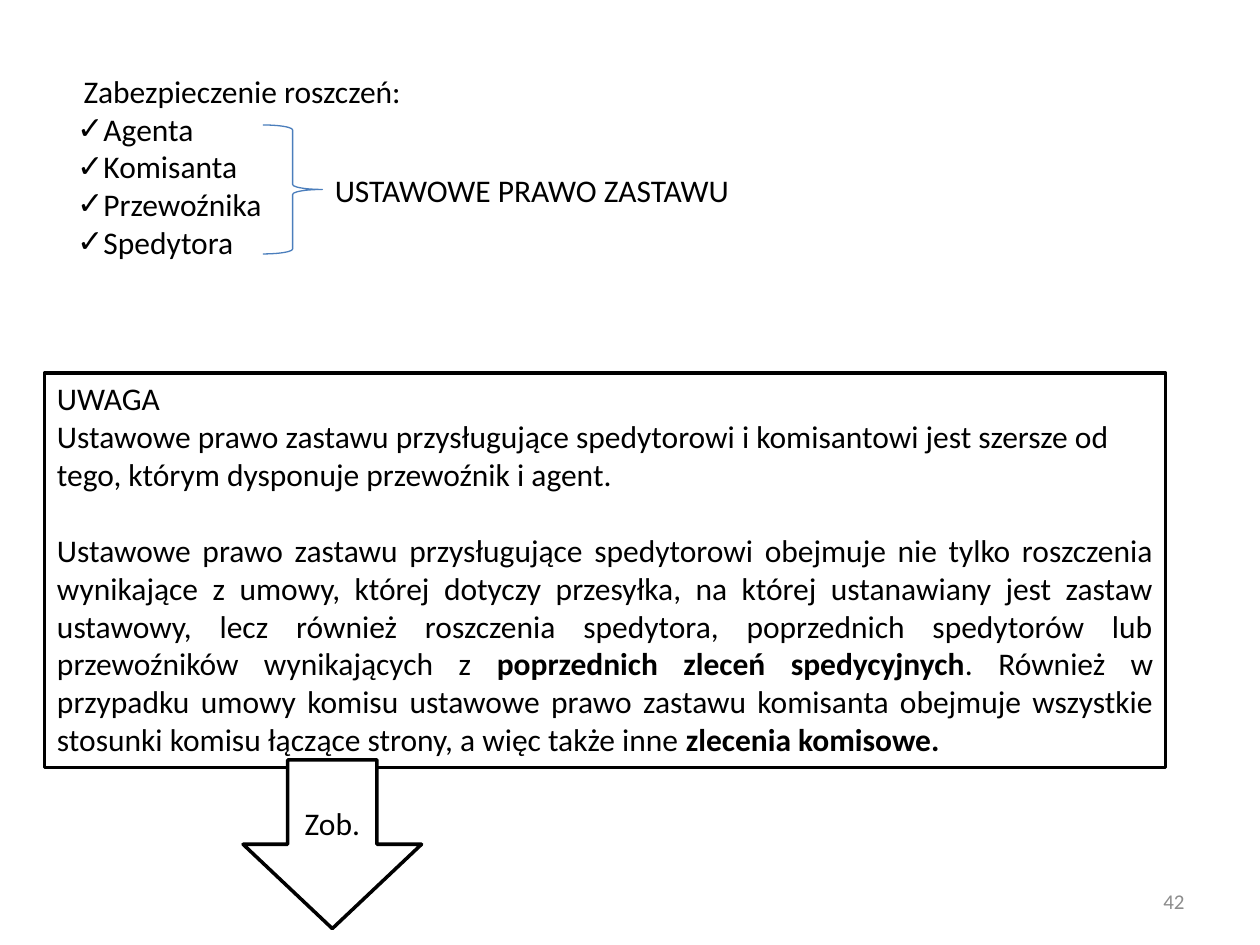
from dataclasses import dataclass

import pptx
import pptx.dml.color
import pptx.enum.shapes
import pptx.enum.text
import pptx.oxml.ns
import pptx.util
from lxml import etree
from pptx.util import Cm, Pt

RGBColor = pptx.dml.color.RGBColor
Shapes = pptx.enum.shapes.MSO_SHAPE
Align = pptx.enum.text.PP_ALIGN
Anchor = pptx.enum.text.MSO_ANCHOR

BLACK = RGBColor(0x00, 0x00, 0x00)
WHITE = RGBColor(0xFF, 0xFF, 0xFF)
GREY = RGBColor(0x8C, 0x8C, 0x8C)
BLUE = RGBColor(0x4B, 0x7E, 0xBC)

FONT = "Calibri"
TEXT_SIZE = 18
LINE_HEIGHT = Pt(22)
BULLET_INDENT = Cm(0.53)


@dataclass(frozen=True)
class Area:
    """Left, top, width and height in centimetres."""
    left: float
    top: float
    width: float
    height: float

    def lengths(self) -> tuple:
        return Cm(self.left), Cm(self.top), Cm(self.width), Cm(self.height)


@dataclass(frozen=True)
class Span:
    text: str
    bold: bool = False


@dataclass(frozen=True)
class Para:
    spans: tuple[Span, ...]
    align: Align = Align.LEFT
    bullet: bool = False
    indent: float = 0
    space_before: int = 0
    size: int = TEXT_SIZE
    color: RGBColor = BLACK


SECURED_PARTIES = ("Agenta", "Komisanta", "Przewoźnika", "Spedytora")
CLAIMS = [Para((Span("Zabezpieczenie roszczeń:"),), indent=0.13)] + [
    Para((Span(party),), bullet=True) for party in SECURED_PARTIES
]
NOTE = [
    Para((Span("UWAGA"),)),
    Para((Span("Ustawowe prawo zastawu przysługujące spedytorowi i komisantowi jest "
               "szersze od tego, którym dysponuje przewoźnik i agent."),)),
    Para((
        Span("Ustawowe prawo zastawu przysługujące spedytorowi obejmuje nie tylko "
             "roszczenia wynikające z umowy, której dotyczy przesyłka, na której "
             "ustanawiany jest zastaw ustawowy, lecz również roszczenia spedytora, "
             "poprzednich spedytorów lub przewoźników wynikających z "),
        Span("poprzednich zleceń spedycyjnych", bold=True),
        Span(". Również w przypadku umowy komisu ustawowe prawo zastawu komisanta "
             "obejmuje wszystkie stosunki komisu łączące strony, a więc także inne "),
        Span("zlecenia komisowe.", bold=True),
    ), align=Align.JUSTIFY, space_before=LINE_HEIGHT),
]


def set_marker(paragraph, para: Para) -> None:
    """Give the paragraph its indent and a check mark, or no bullet."""
    properties = paragraph._p.get_or_add_pPr()
    left = BULLET_INDENT if para.bullet else Cm(para.indent)
    properties.set("marL", str(left))
    properties.set("indent", str(-left if para.bullet else 0))
    tag = "a:buChar" if para.bullet else "a:buNone"
    marker = etree.SubElement(properties, pptx.oxml.ns.qn(tag))
    if para.bullet:
        marker.set("char", "✓")


def write(shape, paras: list[Para], anchor: Anchor = Anchor.TOP, wrap: bool = True) -> None:
    frame = shape.text_frame
    frame.word_wrap = wrap
    frame.auto_size = pptx.enum.text.MSO_AUTO_SIZE.NONE
    frame.vertical_anchor = anchor
    for index, para in enumerate(paras):
        paragraph = frame.add_paragraph() if index else frame.paragraphs[0]
        paragraph.alignment = para.align
        paragraph.space_before = para.space_before or Pt(0)
        set_marker(paragraph, para)
        paragraph.font.name = FONT
        paragraph.font.size = Pt(para.size)
        paragraph.font.color.rgb = para.color
        for span in para.spans:
            run = paragraph.add_run()
            run.text = span.text
            if span.bold:
                run.font.bold = True


def add_outline(page, kind: Shapes, area: Area, line: RGBColor, width: float,
                fill: RGBColor | None = None):
    shape = page.shapes.add_shape(kind, *area.lengths())
    shape.shadow.inherit = False
    shape.line.color.rgb = line
    shape.line.width = Pt(width)
    if fill is None:
        shape.fill.background()
    else:
        shape.fill.solid()
        shape.fill.fore_color.rgb = fill
    return shape


def add_text(page, area: Area, para: Para, anchor: Anchor = Anchor.TOP,
             wrap: bool = True) -> None:
    write(page.shapes.add_textbox(*area.lengths()), [para], anchor, wrap)


def main() -> None:
    deck = pptx.Presentation()
    deck.slide_width, deck.slide_height = Cm(25.4), Cm(19.05)
    page = deck.slides.add_slide(deck.slide_layouts[1])
    title = page.shapes.title
    title.element.getparent().remove(title.element)

    claims = page.placeholders[1]
    claims.left, claims.top, claims.width, claims.height = Area(1.3, 1.32, 18.2, 4.2).lengths()
    write(claims, CLAIMS)

    add_outline(page, Shapes.RIGHT_BRACE, Area(5.3, 2.52, 1.2, 2.6), BLUE, 0.75)
    add_text(page, Area(6.5, 3.33, 8.5, 1.02),
             Para((Span("USTAWOWE PRAWO ZASTAWU"),)), wrap=False)

    note = add_outline(page, Shapes.RECTANGLE, Area(0.9, 7.52, 22.6, 7.95), BLACK, 2, WHITE)
    write(note, NOTE)
    arrow = add_outline(page, Shapes.DOWN_ARROW, Area(4.9, 15.32, 3.6, 3.4), BLACK, 2, WHITE)
    write(arrow, [Para((Span("Zob."),), align=Align.CENTER)], Anchor.MIDDLE)

    add_text(page, Area(18.2, 17.65, 5.93, 1.02),
             Para((Span("42"),), align=Align.RIGHT, size=12, color=GREY), Anchor.MIDDLE)
    deck.save("out.pptx")


if __name__ == "__main__":
    main()
